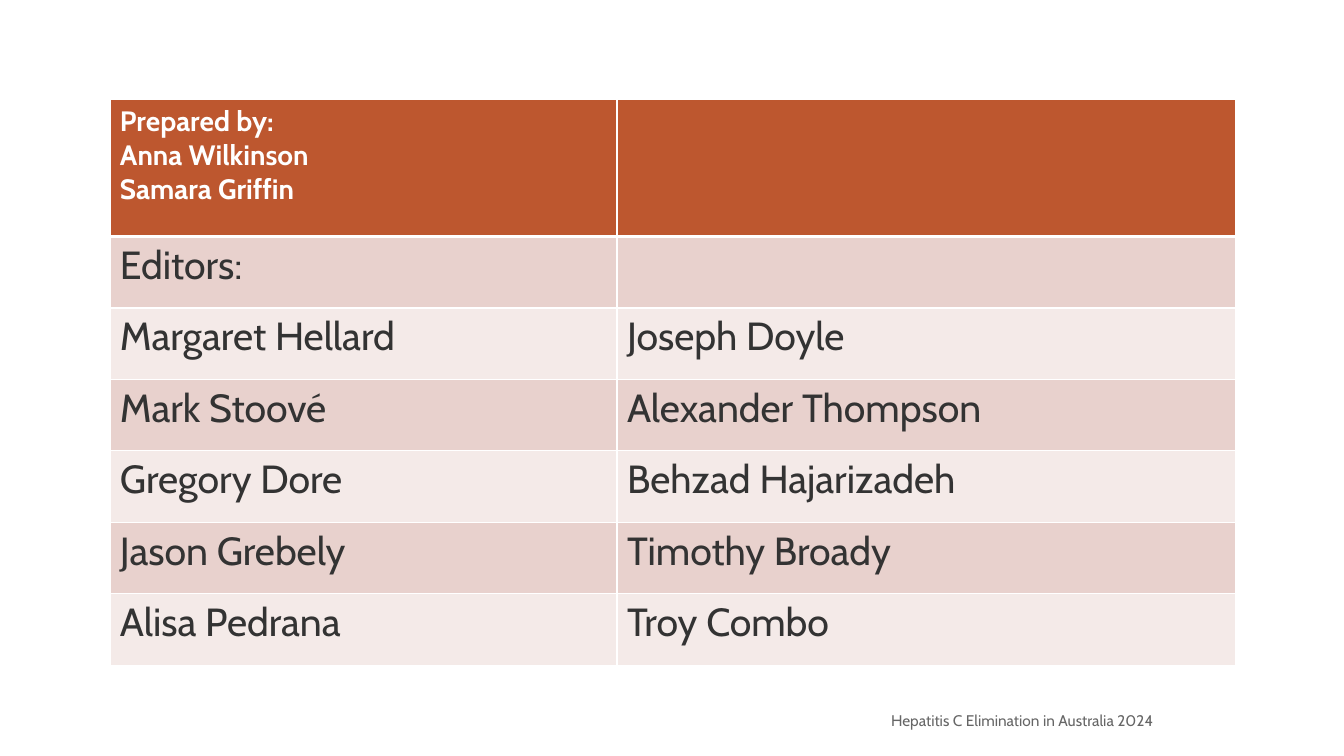
from dataclasses import dataclass

from lxml import etree
from pptx import Presentation
from pptx import util as u
from pptx.dml.color import RGBColor
from pptx.enum import text
from pptx.oxml.ns import qn

FONT = "Cabin"
WHITE = RGBColor(0xFF, 0xFF, 0xFF)
RUST = RGBColor(0xBD, 0x57, 0x2F)
ROSE = RGBColor(0xE8, 0xD1, 0xCD)
BLUSH = RGBColor(0xF4, 0xEA, 0xE8)
CHARCOAL = RGBColor(0x33, 0x33, 0x33)
GREY = RGBColor(0x66, 0x66, 0x66)


@dataclass(frozen=True)
class RowStyle:
    fill: RGBColor
    color: RGBColor
    size: int
    bold: bool
    height: float
    bottom: float


HEADER = RowStyle(RUST, WHITE, 20, True, 3.45, 3)
BANDS = (
    RowStyle(ROSE, CHARCOAL, 28, False, 1.8, 1),
    RowStyle(BLUSH, CHARCOAL, 28, False, 1.8, 1),
)
COLUMN_WIDTHS = (12.78, 15.6)
PEOPLE = (
    ("Prepared by:\nAnna Wilkinson\nSamara Griffin", ""),
    ("Editors:", ""),
    ("Margaret Hellard", "Joseph Doyle"),
    ("Mark Stoové", "Alexander Thompson"),
    ("Gregory Dore", "Behzad Hajarizadeh"),
    ("Jason Grebely", "Timothy Broady"),
    ("Alisa Pedrana", "Troy Combo"),
)


def row_style(index: int) -> RowStyle:
    return HEADER if index == 0 else BANDS[(index - 1) % 2]


def format_text(tf, size: int, color: RGBColor, bold: bool = False) -> None:
    for p in tf.paragraphs:
        for r in p.runs:
            r.font.name = FONT
            r.font.size = u.Pt(size)
            r.font.bold = bold
            r.font.color.rgb = color


def add_borders(cell, top: float, bottom: float) -> None:
    tcPr = cell._tc.get_or_add_tcPr()
    for side, width in (("L", 1), ("R", 1), ("T", top), ("B", bottom)):
        ln = etree.SubElement(tcPr, qn(f"a:ln{side}"), w=str(u.Pt(width)))
        fill = etree.SubElement(ln, qn("a:solidFill"))
        etree.SubElement(fill, qn("a:srgbClr"), val=str(WHITE))


def add_people_table(s) -> None:
    styles = [row_style(i) for i in range(len(PEOPLE))]
    table = s.shapes.add_table(
        len(PEOPLE), len(COLUMN_WIDTHS), u.Cm(2.77), u.Cm(2.51),
        u.Cm(sum(COLUMN_WIDTHS)), u.Cm(sum(st.height for st in styles)),
    ).table
    for column, width in zip(table.columns, COLUMN_WIDTHS):
        column.width = u.Cm(width)
    top = 1
    for row, names, style in zip(table.rows, PEOPLE, styles):
        row.height = u.Cm(style.height)
        for cell, name in zip(row.cells, names):
            add_borders(cell, top, style.bottom)
            cell.fill.solid()
            cell.fill.fore_color.rgb = style.fill
            cell.text_frame.text = name
            format_text(cell.text_frame, style.size, style.color, style.bold)
        top = style.bottom


def add_footer(s) -> None:
    sp = s.shapes.add_textbox(u.Cm(21.89), u.Cm(17.65), u.Cm(7.75), u.Cm(1.02))
    tf = sp.text_frame
    tf.word_wrap = True
    tf.vertical_anchor = text.MSO_ANCHOR.MIDDLE
    tf.text = "Hepatitis C Elimination in Australia 2024"
    tf.paragraphs[0].alignment = text.PP_ALIGN.CENTER
    format_text(tf, 11, GREY)


def main() -> None:
    prs = Presentation()
    prs.slide_width, prs.slide_height = u.Cm(33.87), u.Cm(19.05)
    s = prs.slides.add_slide(prs.slide_layouts[6])
    add_footer(s)
    add_people_table(s)
    prs.save("out.pptx")


if __name__ == "__main__":
    main()
